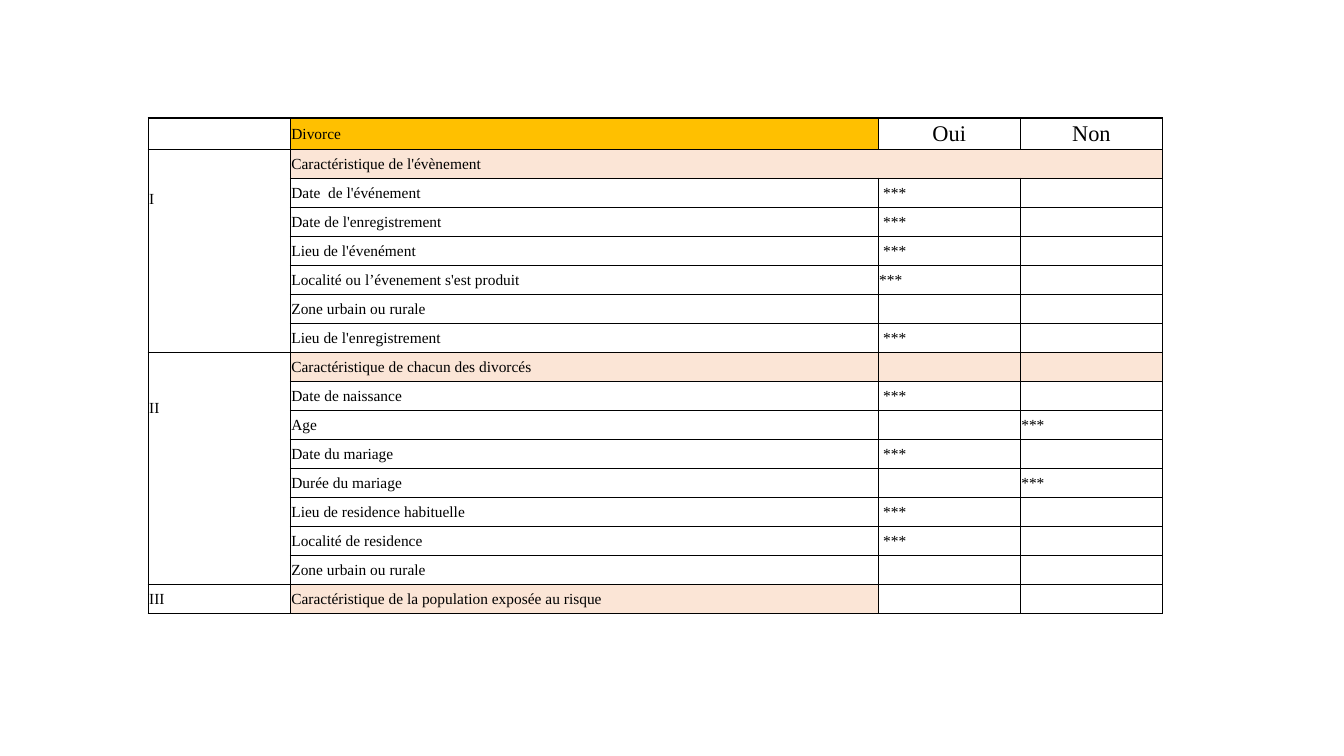
from lxml.etree import SubElement
from pptx import Presentation
from pptx.dml.color import RGBColor
from pptx.enum.text import MSO_ANCHOR, PP_ALIGN
from pptx.oxml.ns import qn
from pptx.util import Inches, Pt

COLORS = {"black": "000000", "amber": "FFC000", "peach": "FBE5D6"}
FONT = "Times New Roman"
MARK = "***"
HEADER_HEIGHT, TABLE_HEIGHT = 0.31, 4.92
WIDTHS = [1.41, 5.83, 1.41, 1.41]

ROWS = [
    ("", "Divorce", "Oui", "Non"),
    ("I", "Caractéristique de l'évènement", "", ""),
    ("", "Date  de l'événement", MARK, ""),
    ("", "Date de l'enregistrement", MARK, ""),
    ("", "Lieu de l'évenément", MARK, ""),
    ("", "Localité ou l’évenement s'est produit", MARK, ""),
    ("", "Zone urbain ou rurale", "", ""),
    ("", "Lieu de l'enregistrement", MARK, ""),
    ("II", "Caractéristique de chacun des divorcés", "", ""),
    ("", "Date de naissance", MARK, ""),
    ("", "Age", "", MARK),
    ("", "Date du mariage", MARK, ""),
    ("", "Durée du mariage", "", MARK),
    ("", "Lieu de residence habituelle", MARK, ""),
    ("", "Localité de residence", MARK, ""),
    ("", "Zone urbain ou rurale", "", ""),
    ("III", "Caractéristique de la population exposée au risque", "", ""),
]
FILLS = {(0, 1): "amber", (1, 1): "peach", (8, 1): "peach",
         (8, 2): "peach", (8, 3): "peach", (16, 1): "peach"}
MERGES = [((1, 0), (7, 0)), ((1, 1), (1, 3)), ((8, 0), (15, 0))]
NUMERAL_TOPS = {(1, 0): 0.41, (8, 0): 0.47}
UNINDENTED_ROW = 5


def add_borders(cell):
    tcPr = cell._tc.get_or_add_tcPr()
    for side in ("lnL", "lnR", "lnT", "lnB"):
        ln = SubElement(tcPr, qn(f"a:{side}"), w=str(Pt(1)))
        fill = SubElement(ln, qn("a:solidFill"))
        SubElement(fill, qn("a:srgbClr"), val=COLORS["black"])


prs = Presentation()
prs.slide_width, prs.slide_height = Inches(13.33), Inches(7.5)
s = prs.slides.add_slide(prs.slide_layouts[6])

table = s.shapes.add_table(
    len(ROWS), len(WIDTHS), Inches(1.47), Inches(1.17),
    Inches(sum(WIDTHS)), Inches(TABLE_HEIGHT)).table
table.first_row = False
table.horz_banding = False
for col, width in zip(table.columns, WIDTHS):
    col.width = Inches(width)
row_height = (TABLE_HEIGHT - HEADER_HEIGHT) / (len(ROWS) - 1)
for i, row in enumerate(table.rows):
    row.height = Inches(row_height if i else HEADER_HEIGHT)

for i, texts in enumerate(ROWS):
    for j, text in enumerate(texts):
        cell = table.cell(i, j)
        add_borders(cell)
        if (i, j) in FILLS:
            cell.fill.solid()
            cell.fill.fore_color.rgb = RGBColor.from_string(COLORS[FILLS[i, j]])
        else:
            cell.fill.background()

        numeral = (i, j) in NUMERAL_TOPS
        indented = text == MARK and j == 2 and i != UNINDENTED_ROW
        layout = {
            "margin_left": Inches(0.05 if indented else 0.01),
            "margin_right": Inches(0.01),
            "margin_top": Inches(NUMERAL_TOPS.get((i, j), 0.01)),
            "margin_bottom": 0,
            "vertical_anchor": MSO_ANCHOR.TOP if numeral else MSO_ANCHOR.MIDDLE,
        }
        for name, value in layout.items():
            setattr(cell, name, value)

        p = cell.text_frame.paragraphs[0]
        if not text:
            SubElement(p._p, qn("a:endParaRPr"), sz="1100")
            continue
        answer_head = i == 0 and j > 1
        p.alignment = PP_ALIGN.CENTER if answer_head else PP_ALIGN.LEFT
        r = p.add_run()
        r.text = text
        for name, value in {"name": FONT, "size": Pt(16 if answer_head else 11)}.items():
            setattr(r.font, name, value)
        r.font.color.rgb = RGBColor.from_string(COLORS["black"])

for first, last in MERGES:
    table.cell(*first).merge(table.cell(*last))

prs.save("out.pptx")
